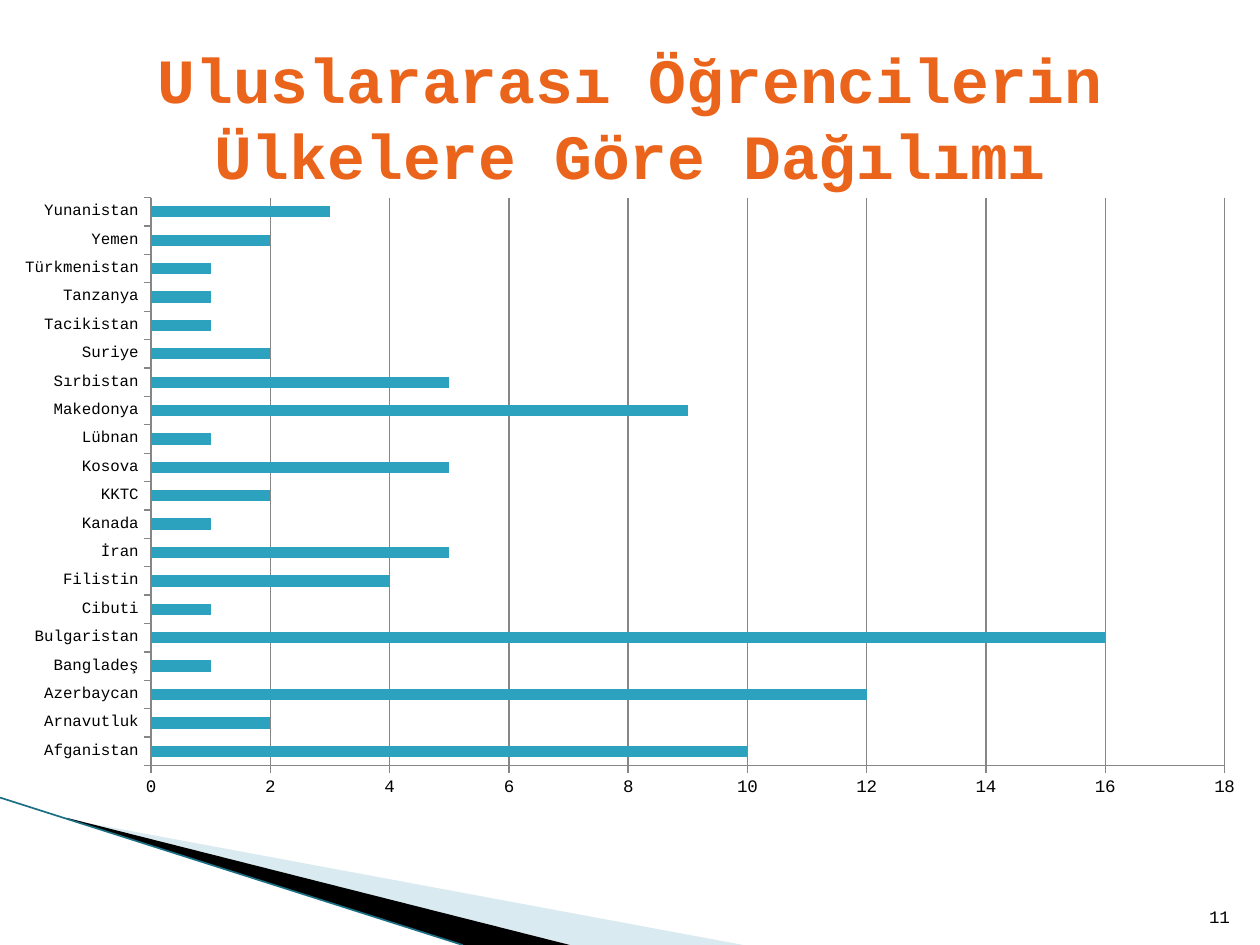
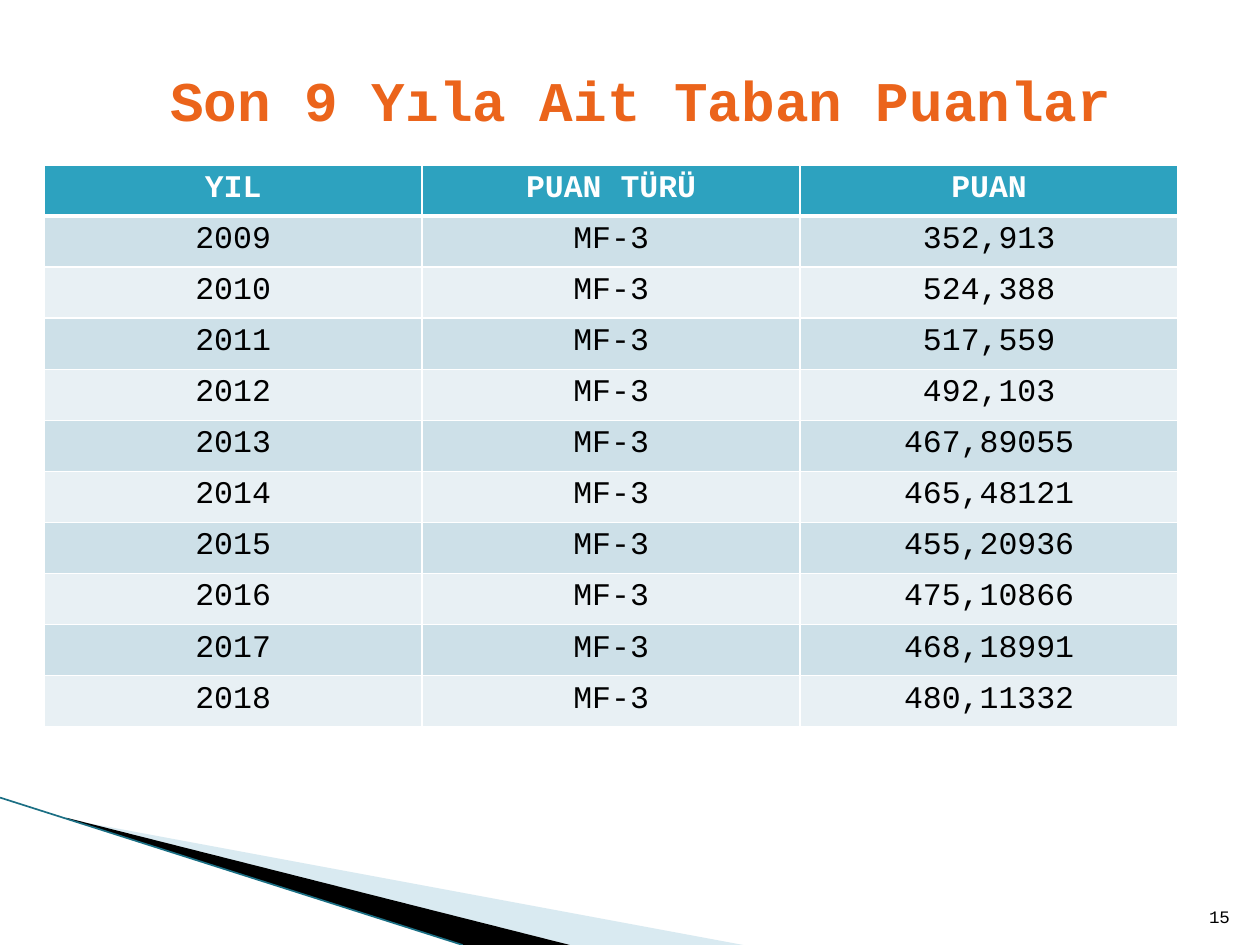
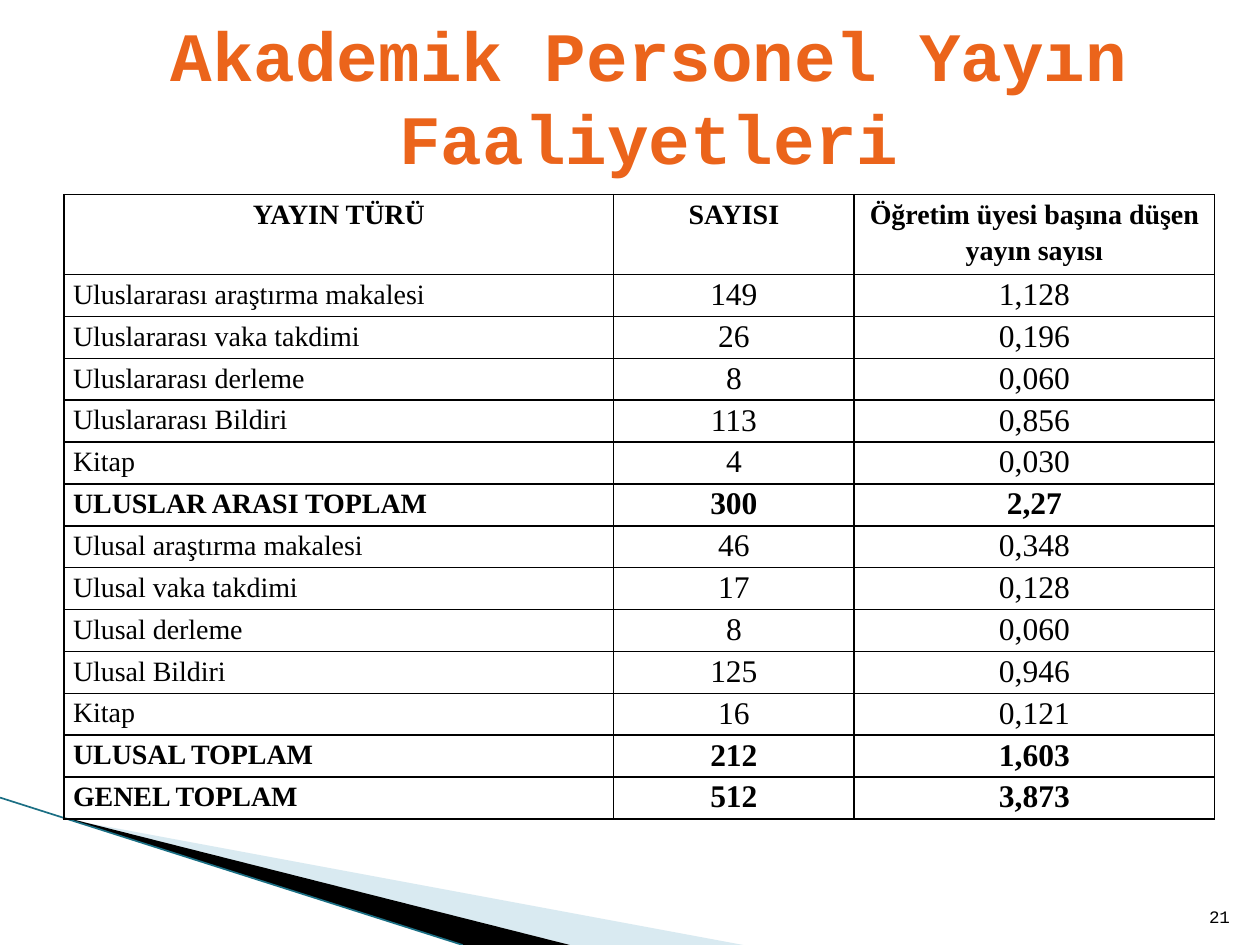
from dataclasses import dataclass

from lxml.etree import SubElement
from pptx import Presentation
from pptx.chart.data import CategoryChartData
from pptx.dml.color import RGBColor
from pptx.enum.chart import XL_CHART_TYPE, XL_TICK_MARK
from pptx.enum.shapes import MSO_CONNECTOR
from pptx.enum.text import MSO_ANCHOR, PP_ALIGN
from pptx.oxml.ns import qn
from pptx.util import Inches, Pt

ORANGE = RGBColor(0xEB, 0x64, 0x1B)
TEAL = RGBColor(0x2D, 0xA2, 0xBF)
DARK_TEAL = RGBColor(0x1B, 0x6F, 0x84)
PALE_BLUE = RGBColor(0xA0, 0xCB, 0xDC)
BAND_DARK = RGBColor(0xCD, 0xE0, 0xE8)
BAND_LIGHT = RGBColor(0xE8, 0xF0, 0xF4)
GRAY = RGBColor(0x86, 0x86, 0x86)
BLACK = RGBColor(0, 0, 0)
WHITE = RGBColor(0xFF, 0xFF, 0xFF)
MONO = "Courier New"
SERIF = "Times New Roman"
SLIDE_WIDTH, SLIDE_HEIGHT = Inches(10), Inches(7.5)

COUNTRIES = {
    "Afganistan": 10, "Arnavutluk": 2, "Azerbaycan": 12, "Bangladeş": 1,
    "Bulgaristan": 16, "Cibuti": 1, "Filistin": 4, "İran": 5, "Kanada": 1,
    "KKTC": 2, "Kosova": 5, "Lübnan": 1, "Makedonya": 9, "Sırbistan": 5,
    "Suriye": 2, "Tacikistan": 1, "Tanzanya": 1, "Türkmenistan": 1,
    "Yemen": 2, "Yunanistan": 3,
}
SCORES = ["352,913", "524,388", "517,559", "492,103", "467,89055", "465,48121",
          "455,20936", "475,10866", "468,18991", "480,11332"]
SCORE_ROWS = [("YIL", "PUAN TÜRÜ", "PUAN")] + [
    (str(year), "MF-3", score) for year, score in enumerate(SCORES, 2009)]
PUBLICATION_ROWS = [
    ("YAYIN TÜRÜ", "SAYISI", "Öğretim üyesi başına düşen yayın sayısı"),
    ("Uluslararası araştırma makalesi", "149", "1,128"),
    ("Uluslararası vaka takdimi", "26", "0,196"),
    ("Uluslararası derleme", "8", "0,060"),
    ("Uluslararası Bildiri", "113", "0,856"),
    ("Kitap", "4", "0,030"),
    ("ULUSLAR ARASI TOPLAM", "300", "2,27"),
    ("Ulusal araştırma makalesi", "46", "0,348"),
    ("Ulusal vaka takdimi", "17", "0,128"),
    ("Ulusal derleme", "8", "0,060"),
    ("Ulusal Bildiri", "125", "0,946"),
    ("Kitap", "16", "0,121"),
    ("ULUSAL TOPLAM", "212", "1,603"),
    ("GENEL TOPLAM", "512", "3,873"),
]


@dataclass
class Box:
    """A region, given in percent of the slide's width and height."""
    left: float
    top: float
    width: float
    height: float

    def point(self, across, down):
        """Slide position of a point given in percent of this box."""
        return (round(SLIDE_WIDTH * (self.left + self.width * across / 100) / 100),
                round(SLIDE_HEIGHT * (self.top + self.height * down / 100) / 100))

    def frame(self):
        left, top = self.point(0, 0)
        right, bottom = self.point(100, 100)
        return left, top, right - left, bottom - top


CORNER = Box(0, 84.4, 60, 15.6)
NUMBER = Box(94.6, 93.47, 4, 5.33)


def set_attributes(target, values):
    for name, value in values.items():
        setattr(target, name, value)


def set_font(font, color, **values):
    set_attributes(font, values)
    font.color.rgb = color


def add_text(slide, box, text, anchor, alignment, color, **font):
    frame = slide.shapes.add_textbox(*box.frame()).text_frame
    set_attributes(frame, {"word_wrap": True, "vertical_anchor": anchor})
    paragraph = frame.paragraphs[0]
    set_attributes(paragraph, {"text": text, "alignment": alignment})
    set_font(paragraph.runs[0].font, color, name=MONO, **font)


def add_wedge(slide, box, corners, color, opacity=100):
    start, *others = [box.point(*corner) for corner in corners]
    builder = slide.shapes.build_freeform(*start)
    builder.add_line_segments(others)
    wedge = builder.convert_to_shape()
    wedge.shadow.inherit = False
    wedge.fill.solid()
    wedge.fill.fore_color.rgb = color
    wedge.line.fill.background()
    if opacity < 100:
        color_element = wedge._element.spPr.find(qn("a:solidFill"))[0]
        SubElement(color_element, qn("a:alpha"), val=str(opacity * 1000))


def add_corner_bands(slide, box):
    add_wedge(slide, box, [(9.2, 15), (98.3, 100), (75.4, 100)], PALE_BLUE, 40)
    add_wedge(slide, box, [(8.8, 13.7), (75.4, 100), (61.2, 100), (9, 14.5)], BLACK)
    edge = slide.shapes.add_connector(
        MSO_CONNECTOR.STRAIGHT, *box.point(0, 0), *box.point(61.2, 100))
    edge.line.color.rgb = DARK_TEAL
    edge.line.width = Pt(0.95)
    SubElement(edge._element.spPr, qn("a:effectLst"))


def add_base_slide(presentation, title_box, title, title_size, number):
    slide = presentation.slides.add_slide(presentation.slide_layouts[6])
    add_corner_bands(slide, CORNER)
    add_text(slide, title_box, title, MSO_ANCHOR.MIDDLE, PP_ALIGN.CENTER, ORANGE,
             size=Pt(title_size), bold=True)
    add_text(slide, NUMBER, number, MSO_ANCHOR.BOTTOM, PP_ALIGN.RIGHT, BLACK,
             size=Pt(10))
    return slide


def add_country_chart(slide, box):
    data = CategoryChartData()
    data.categories = list(COUNTRIES)
    data.add_series("Series 1", list(COUNTRIES.values()))
    chart = slide.shapes.add_chart(
        XL_CHART_TYPE.BAR_CLUSTERED, *box.frame(), data).chart
    set_attributes(chart, {"has_title": False, "has_legend": False})
    set_font(chart.font, BLACK, name=MONO, size=Pt(18))

    plot = chart.plots[0]
    set_attributes(plot, {"vary_by_categories": False, "gap_width": 150})
    fill = plot.series[0].format.fill
    fill.solid()
    fill.fore_color.rgb = TEAL

    for axis, size in ((chart.category_axis, 9), (chart.value_axis, 10)):
        set_attributes(axis, {"major_tick_mark": XL_TICK_MARK.OUTSIDE,
                              "minor_tick_mark": XL_TICK_MARK.NONE})
        set_font(axis.tick_labels.font, BLACK, name=MONO, size=Pt(size))
        axis.format.line.color.rgb = GRAY
    set_attributes(chart.value_axis, {"minimum_scale": 0, "maximum_scale": 18,
                                      "major_unit": 2, "has_major_gridlines": True})
    chart.value_axis.major_gridlines.format.line.color.rgb = GRAY


def set_borders(cell, color, bottom_width=1):
    properties = cell._tc.get_or_add_tcPr()
    for side, width in zip("LRTB", (1, 1, 1, bottom_width)):
        line = SubElement(properties, qn(f"a:ln{side}"), w=str(Pt(width)))
        fill = SubElement(line, qn("a:solidFill"))
        SubElement(fill, qn("a:srgbClr"), val=str(color))


def add_grid(slide, box, rows, column_weights, row_weights, style_cell):
    """Add a table whose cells are dressed by style_cell(cell, row, column)."""
    left, top, width, height = box.frame()
    table = slide.shapes.add_table(len(rows), len(column_weights),
                                   left, top, width, height).table
    for column, weight in zip(table.columns, column_weights):
        column.width = round(width * weight / sum(column_weights))
    for row, weight in zip(table.rows, row_weights):
        row.height = round(height * weight / sum(row_weights))
    for row_index, texts in enumerate(rows):
        for column_index, text in enumerate(texts):
            cell = table.cell(row_index, column_index)
            cell.text = text
            style_cell(cell, row_index, column_index)


def style_score_cell(cell, row, column):
    header = row == 0
    set_borders(cell, WHITE, 3 if header else 1)
    cell.fill.solid()
    cell.fill.fore_color.rgb = (
        TEAL if header else BAND_DARK if row % 2 else BAND_LIGHT)
    paragraph = cell.text_frame.paragraphs[0]
    paragraph.alignment = PP_ALIGN.CENTER
    set_font(paragraph.runs[0].font, WHITE if header else BLACK,
             name=MONO, size=Pt(18), bold=header)


def style_publication_cell(cell, row, column):
    header = row == 0
    total = "TOPLAM" in PUBLICATION_ROWS[row][0]
    label = column == 0
    small = header or label
    set_borders(cell, BLACK)
    cell.fill.background()
    set_attributes(cell, {"margin_left": Inches(0.07), "margin_right": Inches(0.07),
                          "margin_top": 0, "margin_bottom": 0})
    paragraph = cell.text_frame.paragraphs[0]
    set_attributes(paragraph, {
        "alignment": PP_ALIGN.LEFT if label and not header else PP_ALIGN.CENTER,
        "line_spacing": 1.15 if small else 1.08})
    set_font(paragraph.runs[0].font, BLACK, name=SERIF,
             size=Pt(16 if small else 18), bold=header or total)


def main():
    presentation = Presentation()
    set_attributes(presentation, {"slide_width": SLIDE_WIDTH,
                                  "slide_height": SLIDE_HEIGHT})

    slide = add_base_slide(presentation, Box(5, 4, 90, 16.67),
                           "Uluslararası Öğrencilerin Ülkelere Göre Dağılımı", 36, "11")
    add_country_chart(slide, Box(0, 19.6, 100, 66.13))

    slide = add_base_slide(presentation, Box(5.9, 5.87, 90, 9.2),
                           "Son 9 Yıla Ait Taban Puanlar", 32, "15")
    add_grid(slide, Box(3.5, 17.47, 90, 59.47), SCORE_ROWS,
             [1] * 3, [1] * len(SCORE_ROWS), style_score_cell)

    slide = add_base_slide(presentation, Box(5, 1.73, 93, 16.67),
                           "Akademik Personel Yayın Faaliyetleri", 39.6, "21")
    add_grid(slide, Box(5.1, 20.6, 91.3, 66.1), PUBLICATION_ROWS,
             [4.36, 1.91, 2.86], [0.63] + [0.33] * (len(PUBLICATION_ROWS) - 1),
             style_publication_cell)

    presentation.save("out.pptx")


if __name__ == "__main__":
    main()
